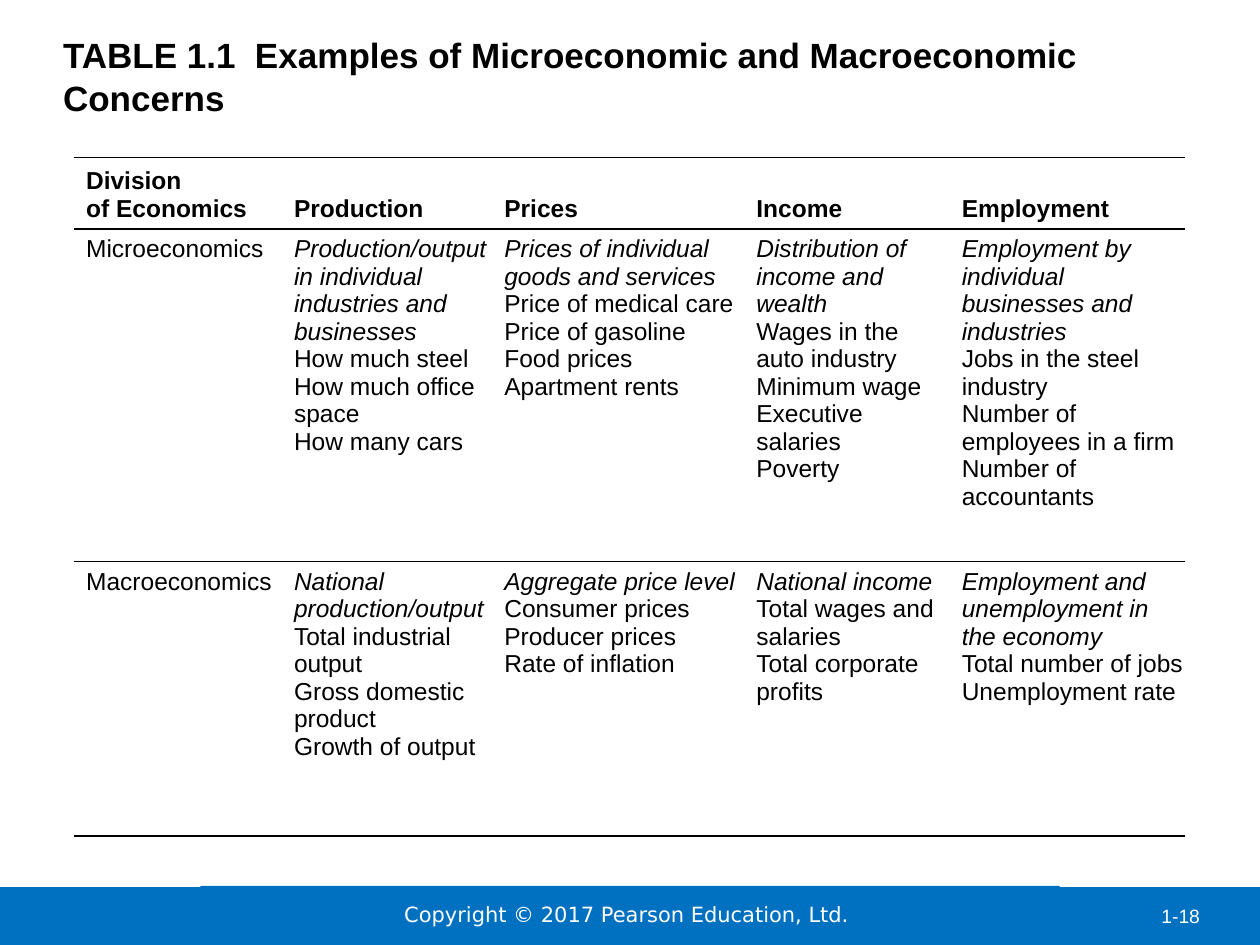
from pptx import Presentation
from pptx.dml.color import RGBColor
from pptx.enum.shapes import MSO_SHAPE
from pptx.enum.text import MSO_ANCHOR, PP_ALIGN
from pptx.oxml.ns import qn
from pptx.util import Pt
from lxml.etree import SubElement

COLORS = {"text": "000000", "rule": "000000", "bar": "0070C0", "on_bar": "FFFFFF"}
COLUMN_WIDTHS = [118.8, 120.2, 144, 117.4, 134.6]
ROW_HEIGHTS = [40.3, 190, 157]
CONCERNS = [
    ["Division\vof Economics", "Production", "Prices", "Income", "Employment"],
    [
        "Microeconomics",
        "Production/output in individual industries and businesses\n"
        "How much steel\nHow much office space\nHow many cars",
        "Prices of individual goods and services\nPrice of medical care\n"
        "Price of gasoline\nFood prices\nApartment rents",
        "Distribution of income and wealth\nWages in the auto industry\n"
        "Minimum wage\nExecutive salaries\nPoverty",
        "Employment by individual businesses and industries\n"
        "Jobs in the steel industry\nNumber of employees in a firm\n"
        "Number of accountants",
    ],
    [
        "Macroeconomics",
        "National production/output\nTotal industrial output\n"
        "Gross domestic product\nGrowth of output",
        "Aggregate price level\nConsumer prices\nProducer prices\nRate of inflation",
        "National income\nTotal wages and salaries\nTotal corporate profits",
        "Employment and unemployment in the economy\nTotal number of jobs\n"
        "Unemployment rate",
    ],
]


def style_font(font, size, color, name="Arial", bold=False, italic=False):
    """Apply the typeface, size, colour and emphasis to a font."""
    font.name, font.size, font.bold, font.italic = name, Pt(size), bold, italic
    font.color.rgb = RGBColor.from_string(COLORS[color])


def set_margins(frame, left, top, right, bottom):
    """Set the four text margins of a frame or table cell."""
    frame.margin_left, frame.margin_top = Pt(left), Pt(top)
    frame.margin_right, frame.margin_bottom = Pt(right), Pt(bottom)


def add_title(slide, left, top, width, height):
    """Place and format the title placeholder."""
    title = slide.shapes.title
    title.left, title.top, title.width, title.height = map(Pt, (left, top, width, height))
    frame = title.text_frame
    frame.text = "TABLE 1.1  Examples of Microeconomic and Macroeconomic Concerns"
    frame.word_wrap = True
    frame.vertical_anchor = MSO_ANCHOR.TOP
    set_margins(frame, 0, 0, 0, 0)
    heading = frame.paragraphs[0]
    heading.alignment = PP_ALIGN.LEFT
    heading.line_spacing = 1.04
    style_font(heading.runs[0].font, 20, "text", bold=True)


def rule_cell(cell):
    """Draw rules above and below a cell and none at its sides."""
    properties = cell._tc.get_or_add_tcPr()
    for side in ("lnL", "lnR"):
        SubElement(SubElement(properties, qn(f"a:{side}")), qn("a:noFill"))
    for side in ("lnT", "lnB"):
        line = SubElement(properties, qn(f"a:{side}"), w=str(Pt(1)))
        fill = SubElement(line, qn("a:solidFill"))
        SubElement(fill, qn("a:srgbClr"), val=COLORS["rule"])
    cell.fill.background()


def add_concerns_table(slide, left, top, width, height):
    """Build the table of concerns with italic lead lines."""
    frame = slide.shapes.add_table(
        len(ROW_HEIGHTS), len(COLUMN_WIDTHS), Pt(left), Pt(top), Pt(width), Pt(height)
    )
    table = frame.table
    table.first_row = table.horz_banding = False
    for column, column_width in zip(table.columns, COLUMN_WIDTHS):
        column.width = Pt(column_width)
    for row, row_height in zip(table.rows, ROW_HEIGHTS):
        row.height = Pt(row_height)
    for row_index, entries in enumerate(CONCERNS):
        is_header = row_index == 0
        for column_index, entry in enumerate(entries):
            cell = table.cell(row_index, column_index)
            rule_cell(cell)
            set_margins(cell, 7.2, 3.6, 0, 3.6)
            cell.vertical_anchor = MSO_ANCHOR.BOTTOM if is_header else MSO_ANCHOR.TOP
            cell.text_frame.text = entry
            for line_index, paragraph in enumerate(cell.text_frame.paragraphs):
                is_lead = line_index == 0 and column_index > 0 and not is_header
                for run in paragraph.runs:
                    style_font(run.font, 14, "text", bold=is_header, italic=is_lead)


def add_bar(slide, left, top, width, height):
    """Add a plain rectangle in the footer colour."""
    bar = slide.shapes.add_shape(
        MSO_SHAPE.RECTANGLE, Pt(left), Pt(top), Pt(width), Pt(height)
    )
    bar.shadow.inherit = False
    bar.fill.solid()
    bar.fill.fore_color.rgb = RGBColor.from_string(COLORS["bar"])
    bar.line.fill.background()
    return bar


def add_footer(slide, left, top, width, height):
    """Add the footer band with its copyright line and page number."""
    add_bar(slide, left, top, width, height)
    copyright_bar = add_bar(slide, left + 114.5, top - 0.8, 491, 32.4)
    notice = copyright_bar.text_frame
    notice.text = "Copyright © 2017 Pearson Education, Ltd. "
    notice.vertical_anchor = MSO_ANCHOR.MIDDLE
    set_margins(notice, 0, 0, 0, 0)
    notice.paragraphs[0].alignment = PP_ALIGN.CENTER
    style_font(notice.paragraphs[0].runs[0].font, 12, "on_bar", "DejaVu Sans")
    page_box = slide.shapes.add_textbox(
        Pt(left + 656.6), Pt(top + 6.4), Pt(54.7), Pt(20.9)
    )
    page_number = page_box.text_frame
    page_number.word_wrap = True
    page_number.text = "1-18"
    style_font(page_number.paragraphs[0].runs[0].font, 11, "on_bar")


def main():
    """Build and save the slide."""
    deck = Presentation()
    deck.slide_width, deck.slide_height = Pt(720), Pt(540)
    slide = deck.slides.add_slide(deck.slide_layouts[5])
    add_footer(slide, 0, 507, 720, 33)
    add_title(slide, 36, 18, 648, 84)
    add_concerns_table(slide, 42, 90, sum(COLUMN_WIDTHS), sum(ROW_HEIGHTS))
    deck.save("out.pptx")


if __name__ == "__main__":
    main()
